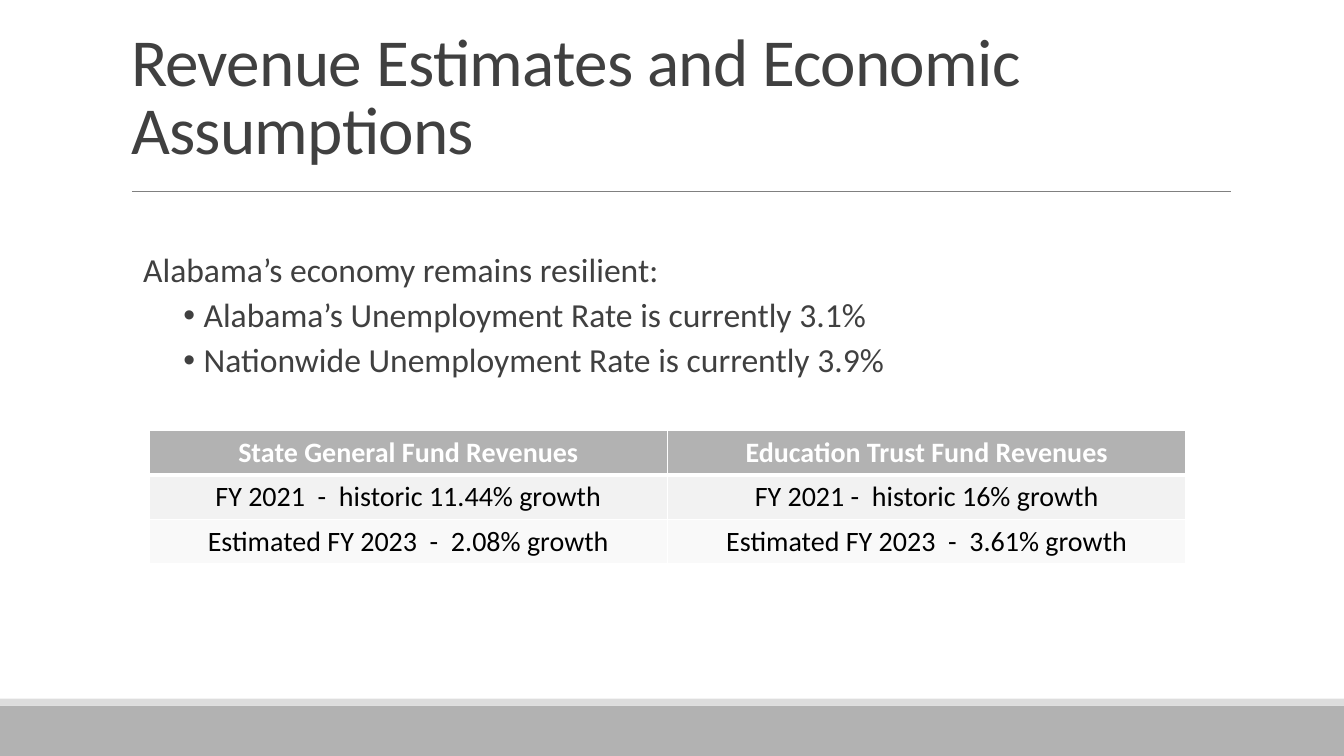
"""Build the slide on revenue estimates and economic assumptions."""
import pptx
import pptx.dml.color
import pptx.enum.shapes
import pptx.enum.text
import pptx.oxml
import pptx.oxml.ns
import pptx.util

Pt = pptx.util.Pt
RGBColor = pptx.dml.color.RGBColor

WHITE = RGBColor(0xFF, 0xFF, 0xFF)
BLACK = RGBColor(0, 0, 0)
TEXT_GRAY = RGBColor(0x40, 0x40, 0x40)
RULE_GRAY = RGBColor(0x80, 0x80, 0x80)
BAND_GRAY = RGBColor(0xB2, 0xB2, 0xB2)
STRIPE_GRAY = RGBColor(0xDD, 0xDD, 0xDD)
ROW_FILLS = (BAND_GRAY, RGBColor(0xF2, 0xF2, 0xF2), RGBColor(0xF9, 0xF9, 0xF9))

TITLE_FONT = {"name": "Calibri", "size": Pt(48), "bold": False}
BODY_FONT = {"name": "Calibri", "size": Pt(24), "bold": False}
HEADER_FONT = {"name": "Calibri", "size": Pt(20), "bold": True}
CELL_FONT = {**HEADER_FONT, "bold": False}
TITLE_PARAGRAPH = {"line_spacing": 0.85, "alignment": pptx.enum.text.PP_ALIGN.LEFT}
BODY_PARAGRAPH = {"line_spacing": 0.9, "space_before": Pt(2), "space_after": Pt(4)}
CENTERED = {"alignment": pptx.enum.text.PP_ALIGN.CENTER}

BODY_LINES = (
    ("Alabama’s economy remains resilient:", 1, 15.84, 0),
    ("Alabama’s Unemployment Rate is currently 3.1%", 3, 59.04, -14.4),
    ("Nationwide Unemployment Rate is currently 3.9%", 3, 59.04, -14.4),
)
REVENUES = (
    ("State General Fund Revenues", "Education Trust Fund Revenues"),
    ("FY 2021  -  historic 11.44% growth", "FY 2021 -  historic 16% growth"),
    ("Estimated FY 2023  -  2.08% growth", "Estimated FY 2023  -  3.61% growth"),
)


def set_attributes(target, values):
    """Set each named attribute of the target."""
    for name, value in values.items():
        setattr(target, name, value)


def place(shape, left, top, width, height):
    """Move and size a shape, in points."""
    names = ("left", "top", "width", "height")
    set_attributes(shape, dict(zip(names, map(Pt, (left, top, width, height)))))


def write(paragraph, text, color, font, layout):
    """Write one formatted run and return it."""
    run = paragraph.add_run()
    run.text = text
    set_attributes(run.font, font)
    run.font.color.rgb = color
    set_attributes(paragraph, layout)
    return run


def add_band(slide, top, height, color):
    """Add a full-width band."""
    band = slide.shapes.add_shape(
        pptx.enum.shapes.MSO_SHAPE.RECTANGLE, 0, Pt(top), Pt(960), Pt(height))
    band.shadow.inherit = False
    band.fill.solid()
    band.fill.fore_color.rgb = color
    band.line.fill.background()


def add_rule(slide, left, right, top):
    """Add the thin line below the title."""
    rule = slide.shapes.add_connector(
        pptx.enum.shapes.MSO_CONNECTOR.STRAIGHT, Pt(left), Pt(top), Pt(right), Pt(top))
    rule.line.color.rgb = RULE_GRAY
    rule.line.width = Pt(0.5)
    pptx.oxml.ns.qn("a:effectLst")
    rule._element.spPr.append(pptx.oxml.parse_xml(
        f"<a:effectLst {pptx.oxml.ns.nsdecls('a')}/>"))


def fill_title(title, text):
    """Place and write the title."""
    place(title, 86.4, 22.3, 792, 101.5)
    set_attributes(title.text_frame, {
        "vertical_anchor": pptx.enum.text.MSO_ANCHOR.BOTTOM,
        "auto_size": pptx.enum.text.MSO_AUTO_SIZE.NONE, "word_wrap": True})
    run = write(title.text_frame.paragraphs[0], text, TEXT_GRAY, TITLE_FONT, TITLE_PARAGRAPH)
    run.font._element.set("spc", "-50")


def set_bullet(paragraph, margin, indent):
    """Indent a paragraph, with a bullet if its indent hangs."""
    properties = paragraph._p.get_or_add_pPr()
    properties.set("marL", str(Pt(margin)))
    properties.set("indent", str(Pt(indent)))
    tags = ('<a:buFont {0} typeface="Arial"/>', '<a:buChar {0} char="•"/>') if indent else (
        "<a:buNone {0}/>",)
    for tag in tags:
        properties.append(pptx.oxml.parse_xml(tag.format(pptx.oxml.ns.nsdecls("a"))))


def fill_body(body, lines):
    """Place and write the list."""
    place(body, 86.4, 177.8, 792, 284)
    frame = body.text_frame
    set_attributes(frame, {
        "margin_left": 0, "margin_right": 0, "margin_top": Pt(3.6), "margin_bottom": Pt(3.6),
        "vertical_anchor": pptx.enum.text.MSO_ANCHOR.TOP,
        "auto_size": pptx.enum.text.MSO_AUTO_SIZE.NONE, "word_wrap": True})
    for number, (text, level, margin, indent) in enumerate(lines):
        paragraph = frame.add_paragraph() if number else frame.paragraphs[0]
        write(paragraph, text, TEXT_GRAY, BODY_FONT, {**BODY_PARAGRAPH, "level": level})
        set_bullet(paragraph, margin, indent)


def set_borders(cell, top, bottom):
    """Give a cell white borders, 1 point wide at the sides."""
    properties = cell._tc.get_or_add_tcPr()
    for side, width in (("L", 1), ("R", 1), ("T", top), ("B", bottom)):
        properties.append(pptx.oxml.parse_xml(
            f'<a:ln{side} {pptx.oxml.ns.nsdecls("a")} w="{Pt(width)}"><a:solidFill>'
            f'<a:srgbClr val="{WHITE}"/></a:solidFill></a:ln{side}>'))


def add_revenue_table(slide, rows):
    """Add the table of fund revenues."""
    table = slide.shapes.add_table(
        len(rows), len(rows[0]), Pt(106.5), Pt(307.5), Pt(740.6), Pt(94.2)).table
    for row, (texts, fill) in enumerate(zip(rows, ROW_FILLS)):
        table.rows[row].height = Pt(31.4)
        color, font = (BLACK, CELL_FONT) if row else (WHITE, HEADER_FONT)
        for column, text in enumerate(texts):
            cell = table.cell(row, column)
            set_borders(cell, 3 if row == 1 else 1, 3 if row == 0 else 1)
            cell.fill.solid()
            cell.fill.fore_color.rgb = fill
            write(cell.text_frame.paragraphs[0], text, color, font, CENTERED)


def main():
    """Build and save the presentation."""
    presentation = pptx.Presentation()
    set_attributes(presentation, {"slide_width": Pt(960), "slide_height": Pt(540)})
    slide = presentation.slides.add_slide(presentation.slide_layouts[1])
    add_band(slide, 504, 36, BAND_GRAY)
    add_band(slide, 499, 5, STRIPE_GRAY)
    add_rule(slide, 94.3, 879, 136.8)
    fill_title(slide.shapes.title, "Revenue Estimates and Economic Assumptions")
    fill_body(slide.placeholders[1], BODY_LINES)
    add_revenue_table(slide, REVENUES)
    presentation.save("out.pptx")


if __name__ == "__main__":
    main()
